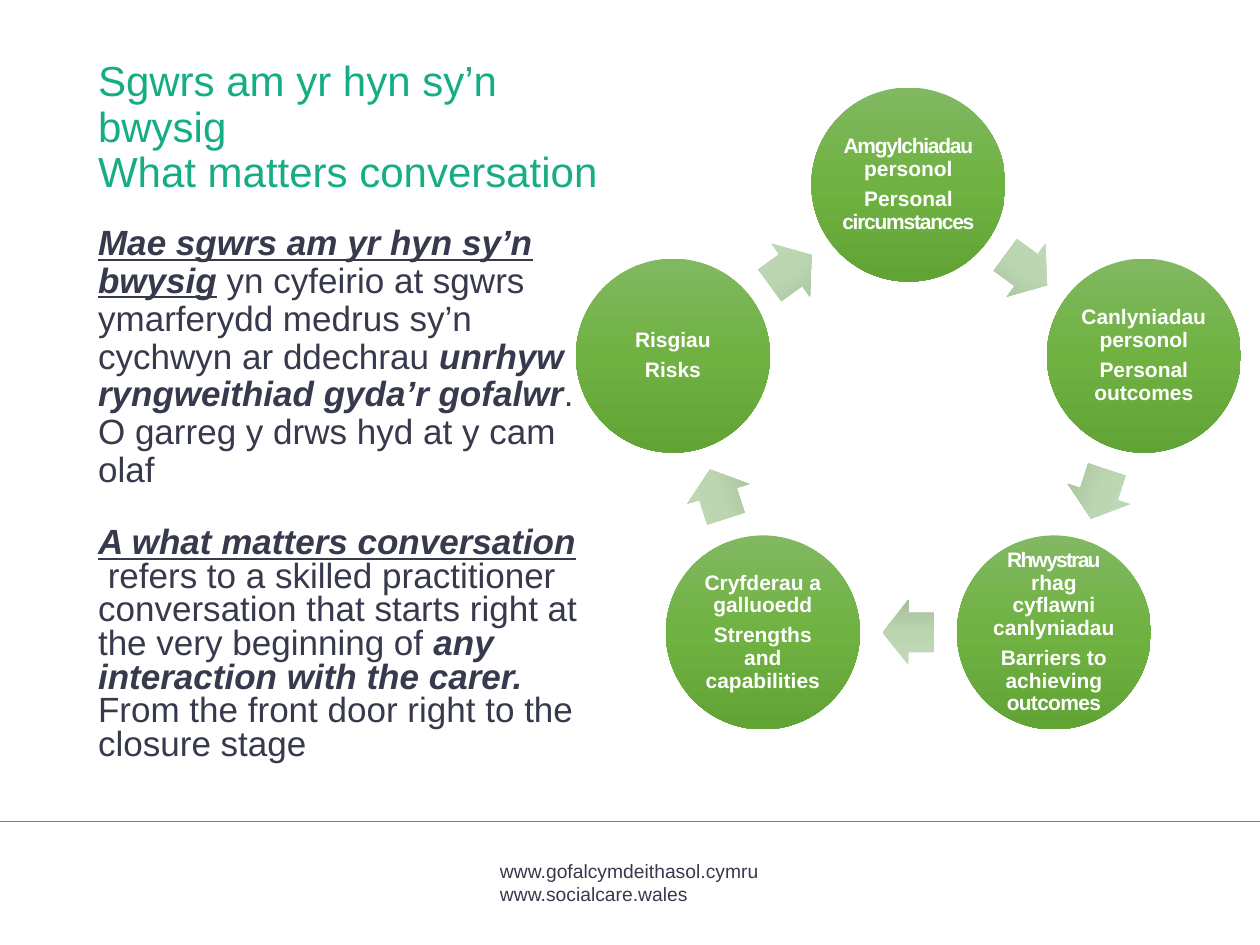
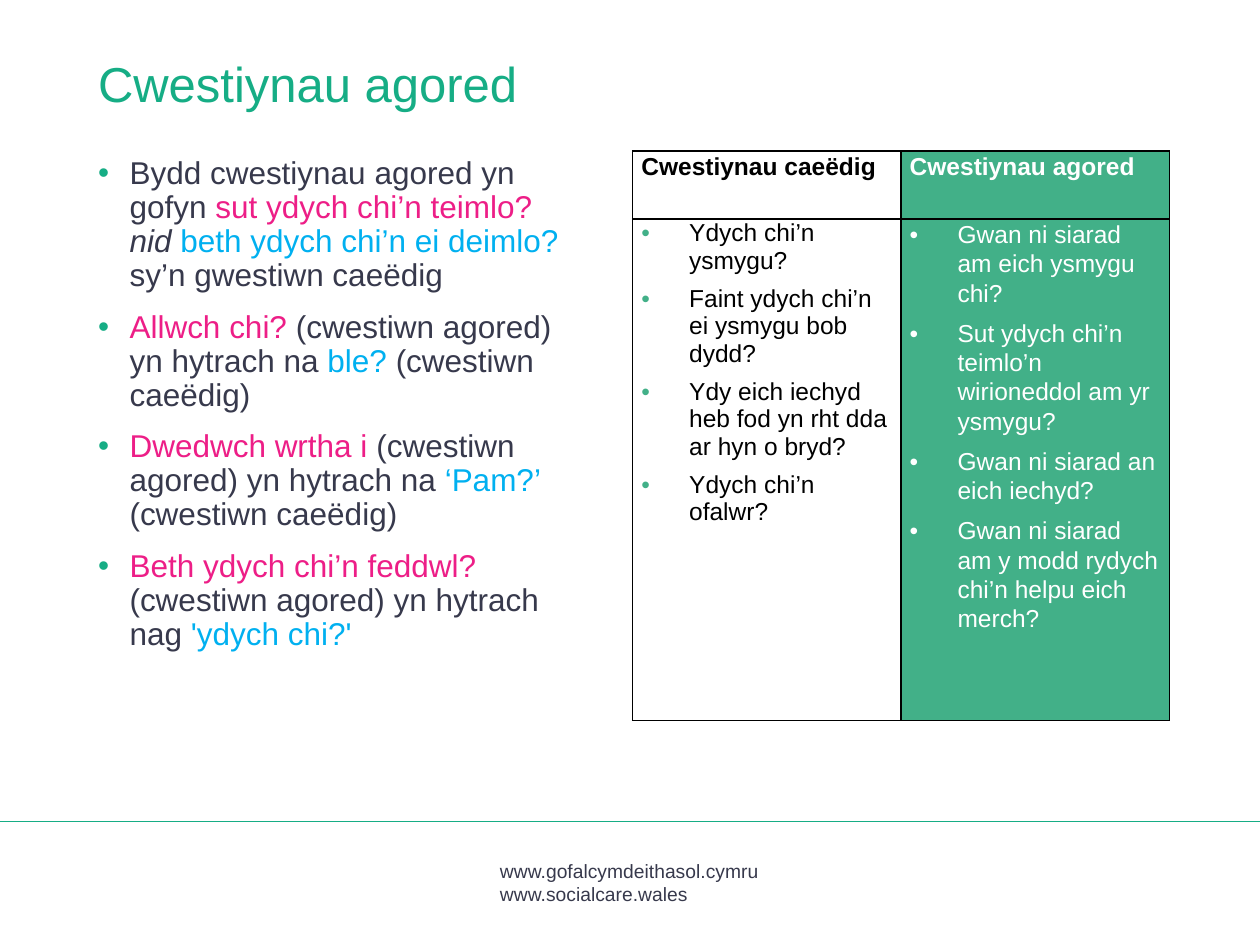
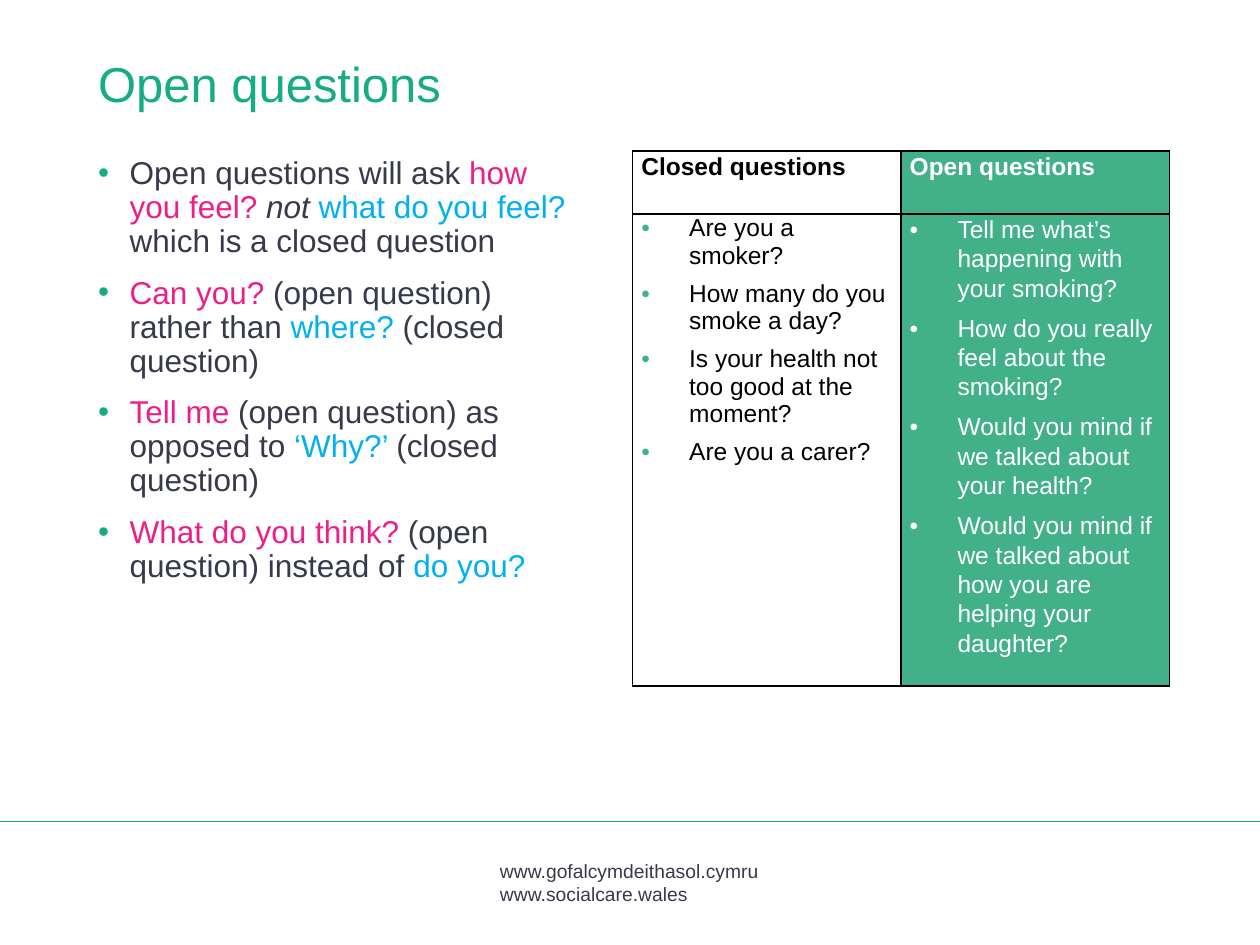
"""Builds three bilingual slides on what matters conversations and open questions."""
from copy import deepcopy
from math import cos, radians, sin

from pptx import Presentation
from pptx.dml.color import RGBColor
from pptx.enum.shapes import MSO_CONNECTOR, MSO_SHAPE
from pptx.enum.text import MSO_ANCHOR, PP_ALIGN
from pptx.oxml import parse_xml
from pptx.oxml.ns import nsdecls, qn
from pptx.util import Emu, Inches, Pt

ELLIPSE, ARROW = MSO_SHAPE.OVAL, MSO_SHAPE.RIGHT_ARROW
STRAIGHT = MSO_CONNECTOR.STRAIGHT
MIDDLE, CENTER = MSO_ANCHOR.MIDDLE, PP_ALIGN.CENTER

FONT = "Arial"
TEAL = RGBColor(0x16, 0xAD, 0x85)
PANEL = RGBColor(0x42, 0xB0, 0x88)
INK = RGBColor(0x37, 0x39, 0x4C)
PINK = RGBColor(0xED, 0x1E, 0x87)
BLUE = RGBColor(0x00, 0xB0, 0xF0)
BLACK = RGBColor(0, 0, 0)
WHITE = RGBColor(0xFF, 0xFF, 0xFF)
CIRCLE_SHADES = [RGBColor(0x81, 0xB8, 0x61), RGBColor(0x6F, 0xB2, 0x42), RGBColor(0x62, 0xA3, 0x36)]
ARROW_SHADES = [RGBColor(0xC4, 0xD9, 0xBB), RGBColor(0xBA, 0xD5, 0xAF), RGBColor(0xA5, 0xBF, 0x99)]

WIDTH, HEIGHT = 10, 7.5
LEFT, COLUMN = 0.68, 4.02
TITLE_TOP, BODY_TOP = 0.43, 1.2
RULE_TOP = 6.52
TABLE_LEFT, TABLE_COLUMN = 5.02, 2.13
RING_X, RING_Y, RING_RADIUS = 7.21, 3.43, 1.965
CIRCLE, ARROW_LENGTH, ARROW_WIDTH = 1.54, 0.41, 0.52

STYLES = {
    "plain": {},
    "strong": {"bold": True, "italic": True},
    "key": {"bold": True, "italic": True, "underline": True},
    "open": {"color": PINK},
    "closed": {"color": BLUE},
    "stress": {"italic": True},
    "tight": {"spacing": -70},
    "tighter": {"spacing": -100},
    "snug": {"spacing": -40},
}

FOOTER = ["www.gofalcymdeithasol.cymru", "www.socialcare.wales"]

CONVERSATION_TITLE = "Sgwrs am yr hyn sy’n bwysig\nWhat matters conversation"
CONVERSATION_TEXTS = [
    (1.74, 1.87, 0.9, [
        ("Mae sgwrs am yr hyn sy’n bwysig", "key"),
        (" yn cyfeirio at sgwrs ymarferydd medrus sy’n cychwyn ar ddechrau ", "plain"),
        ("unrhyw ryngweithiad gyda’r gofalwr", "strong"),
        (". O garreg y drws hyd at y cam olaf", "plain")]),
    (4.14, 2.1, 0.8, [
        ("A what matters conversation", "key"),
        ("  refers to a skilled practitioner conversation that starts right at "
         "the very beginning of ", "plain"),
        ("any interaction with the carer. ", "strong"),
        ("From the front door right to the closure stage", "plain")]),
]
RING = [
    [[("Amgylchiadau", "tight"), (" personol", "plain")],
     [("Personal ", "plain"), ("circumstances", "tight")]],
    ["Canlyniadau personol", "Personal outcomes"],
    [[("Rhwystrau", "tighter"), (" rhag cyflawni canlyniadau", "plain")],
     [("Barriers to achieving ", "plain"), ("outcomes", "snug")]],
    ["Cryfderau a galluoedd", "Strengths and capabilities"],
    ["Risgiau", "Risks"],
]

QUESTION_SLIDES = [
    {"title": "Cwestiynau agored",
     "points": [
         [("Bydd cwestiynau agored yn gofyn ", "plain"), ("sut ydych chi’n teimlo? ", "open"),
          ("nid ", "stress"), ("beth ydych chi’n ei deimlo? ", "closed"),
          ("sy’n gwestiwn caeëdig", "plain")],
         [("Allwch chi? ", "open"), ("(cwestiwn agored) yn hytrach na ", "plain"),
          ("ble? ", "closed"), ("(cwestiwn caeëdig)", "plain")],
         [("Dwedwch wrtha i ", "open"), ("(cwestiwn agored) yn hytrach na ", "plain"),
          ("‘Pam?’ ", "closed"), ("(cwestiwn caeëdig)", "plain")],
         [("Beth ydych chi’n feddwl? ", "open"), ("(cwestiwn agored) yn hytrach nag ", "plain"),
          ("'ydych chi?'", "closed")]],
     "heads": ["Cwestiynau caeëdig", "Cwestiynau agored"],
     "questions": [
         ["Ydych chi’n ysmygu?", "Faint ydych chi’n ei ysmygu bob dydd?",
          "Ydy eich iechyd heb fod yn rht dda ar hyn o bryd?", "Ydych chi’n ofalwr?"],
         ["Gwan ni siarad am eich ysmygu chi?",
          "Sut ydych chi’n teimlo’n wirioneddol am yr ysmygu?",
          "Gwan ni siarad an eich iechyd?",
          "Gwan ni siarad am y modd rydych chi’n helpu eich merch?"]],
     "rows": [0.54, 3.98]},
    {"title": "Open questions",
     "points": [
         [("Open questions will ask ", "plain"), ("how you feel? ", "open"), ("not ", "stress"),
          ("what do you feel?", "closed"), (" which is a closed question", "plain")],
         [("Can you?", "open"), (" (open question) rather than ", "plain"),
          ("where?", "closed"), (" (closed question)", "plain")],
         [("Tell me ", "open"), ("(open question) as opposed to ", "plain"),
          ("‘Why?’ ", "closed"), ("(closed question)", "plain")],
         [("What do you think?", "open"), (" (open question) instead of ", "plain"),
          ("do you?", "closed")]],
     "heads": ["Closed questions", "Open questions"],
     "questions": [
         ["Are you a smoker?", "How many do you smoke a day?",
          "Is your health not too good at the moment?", "Are you a carer?"],
         ["Tell me what’s happening with your smoking?",
          "How do you really feel about the smoking?",
          "Would you mind if we talked about your health?",
          "Would you mind if we talked about how you are helping your daughter?"]],
     "rows": [0.5, 3.71]},
]


def add_bullet(para, indent, color):
    """Gives a paragraph a hanging bullet in the given colour."""
    properties = para._p.get_or_add_pPr()
    properties.set("marL", str(Inches(indent)))
    properties.set("indent", str(-Inches(indent)))
    for tag in (f'<a:buClr {nsdecls("a")}><a:srgbClr val="{color}"/></a:buClr>',
                f'<a:buFont {nsdecls("a")} typeface="{FONT}"/>',
                f'<a:buChar {nsdecls("a")} char="•"/>'):
        properties.append(parse_xml(tag))


def add_span(para, text, look):
    """Adds one formatted run."""
    span = para.add_run()
    span.text = text
    look = dict(look)
    span.font.color.rgb = look.pop("color")
    spacing = look.pop("spacing", None)
    if spacing:
        span._r.get_or_add_rPr().set("spc", str(spacing))
    for name, value in look.items():
        setattr(span.font, name, value)


def write(frame, paragraphs, size, color, bold=None, bullet=None, before=0, **layout):
    """Fills a text frame with paragraphs given as strings or lists of styled spans."""
    frame.word_wrap = True
    base = {"name": FONT, "size": Pt(size), "color": color, "bold": bold}
    for index, spans in enumerate(paragraphs):
        para = frame.add_paragraph() if index else frame.paragraphs[0]
        for name, value in layout.items():
            setattr(para, name, value)
        if index and before:
            para.space_before = Pt(before)
        if bullet:
            add_bullet(para, *bullet)
        for text, style in [(spans, "plain")] if isinstance(spans, str) else spans:
            for line, part in enumerate(text.split("\n")):
                if line:
                    para.add_line_break()
                add_span(para, part, base | STYLES[style])


def add_text(page, left, top, width, height, paragraphs, size, color, **options):
    """Adds a text box."""
    box = page.shapes.add_textbox(*map(Inches, (left, top, width, height)))
    write(box.text_frame, paragraphs, size, color, **options)


def add_page(deck, title, title_size, title_width, title_height):
    """Adds a slide with its title, footer rule and web addresses."""
    page = deck.slides.add_slide(deck.slide_layouts[6])
    rule = page.shapes.add_connector(STRAIGHT, 0, Inches(RULE_TOP), Inches(WIDTH), Inches(RULE_TOP))
    rule.line.color.rgb = TEAL
    rule.line.width = Pt(1)
    rule._element.spPr.append(parse_xml(f'<a:effectLst {nsdecls("a")}/>'))
    add_text(page, 3.87, 6.77, 2.26, 0.46, FOOTER, 11, INK)
    add_text(page, LEFT, TITLE_TOP, title_width, title_height, [title], title_size, TEAL,
             line_spacing=0.9)
    return page


def add_shaded(page, kind, center, width, height, shades):
    """Adds a borderless shape shaded from top to bottom around a centre point."""
    x, y = center
    shape = page.shapes.add_shape(
        kind, *map(Inches, (x - width / 2, y - height / 2, width, height)))
    shape.shadow.inherit = False
    shape.line.fill.background()
    shape.fill.gradient()
    shape.fill.gradient_angle = 270
    stops = shape._element.find(".//" + qn("a:gsLst"))
    stops.append(deepcopy(stops[0]))
    for index, (stop, shade) in enumerate(zip(shape.fill.gradient_stops, shades)):
        stop.position = index / (len(shades) - 1)
        stop.color.rgb = shade
    return shape


def ring_point(step, radius):
    """Returns the point a number of steps clockwise from the top of the ring."""
    angle = radians(step * 360 / len(RING))
    return RING_X + radius * sin(angle), RING_Y - radius * cos(angle)


def add_ring(page):
    """Draws the cycle of circles with an arrow between each pair."""
    turn = 360 / len(RING)
    for step, labels in enumerate(RING):
        circle = add_shaded(page, ELLIPSE, ring_point(step, RING_RADIUS), CIRCLE, CIRCLE,
                            CIRCLE_SHADES)
        frame = circle.text_frame
        for side in ("left", "top", "right", "bottom"):
            setattr(frame, f"margin_{side}", Inches(0.02))
        frame.vertical_anchor = MIDDLE
        write(frame, labels, 12, WHITE, bold=True, alignment=CENTER, line_spacing=0.9,
              space_after=Pt(4.2))
        middle = ring_point(step + 0.5, RING_RADIUS * cos(radians(turn / 2)))
        arrow = add_shaded(page, ARROW, middle, ARROW_LENGTH, ARROW_WIDTH, ARROW_SHADES)
        arrow.adjustments[0] = 0.6
        arrow.rotation = turn * (step + 0.5)


def format_cell(cell, filled):
    """Sets a cell's margins, fill and black borders."""
    for side, margin in {"left": 0.07, "top": 0, "right": 0.07, "bottom": 0}.items():
        setattr(cell, f"margin_{side}", Inches(margin))
    if filled:
        cell.fill.solid()
        cell.fill.fore_color.rgb = PANEL
    else:
        cell.fill.background()
    properties = cell._tc.get_or_add_tcPr()
    for index, side in enumerate("LRTB"):
        properties.insert(index, parse_xml(
            f'<a:ln{side} {nsdecls("a")} w="{Pt(1)}"><a:solidFill>'
            f'<a:srgbClr val="{BLACK}"/></a:solidFill></a:ln{side}>'))


def add_questions(page, heads, questions, rows):
    """Adds the table that sets closed questions beside open ones."""
    frame = page.shapes.add_table(
        2, 2, *map(Inches, (TABLE_LEFT, BODY_TOP, 2 * TABLE_COLUMN, sum(rows))))
    table = frame.table
    table.first_row = table.horz_banding = False
    for row, height in zip(table.rows, rows):
        row.height = Emu(Inches(height))
    columns = [(BLACK, PANEL, 1.0), (WHITE, WHITE, 1.07)]
    for index, (color, bullet_color, spacing) in enumerate(columns):
        table.columns[index].width = Inches(TABLE_COLUMN)
        head, body = table.cell(0, index), table.cell(1, index)
        for cell in (head, body):
            format_cell(cell, filled=index == 1)
        write(head.text_frame, [heads[index]], 14, color, bold=True, line_spacing=1.07,
              space_after=Pt(3))
        write(body.text_frame, questions[index], 14, color, bold=False, before=3,
              bullet=(0.38, bullet_color), line_spacing=spacing, space_after=Pt(3))


def main():
    """Builds and saves the deck."""
    deck = Presentation()
    deck.slide_width, deck.slide_height = Inches(WIDTH), Inches(HEIGHT)

    page = add_page(deck, CONVERSATION_TITLE, 24, 4.33, 1.31)
    add_ring(page)
    for top, height, spacing, spans in CONVERSATION_TEXTS:
        add_text(page, LEFT, top, COLUMN, height, [spans], 20, INK, line_spacing=spacing)

    for content in QUESTION_SLIDES:
        page = add_page(deck, content["title"], 28, COLUMN, 1)
        add_text(page, LEFT, BODY_TOP, COLUMN, 4.9, content["points"], 18, INK, before=10,
                 bullet=(0.25, TEAL), line_spacing=0.9)
        add_questions(page, content["heads"], content["questions"], content["rows"])

    deck.save("out.pptx")


if __name__ == "__main__":
    main()
